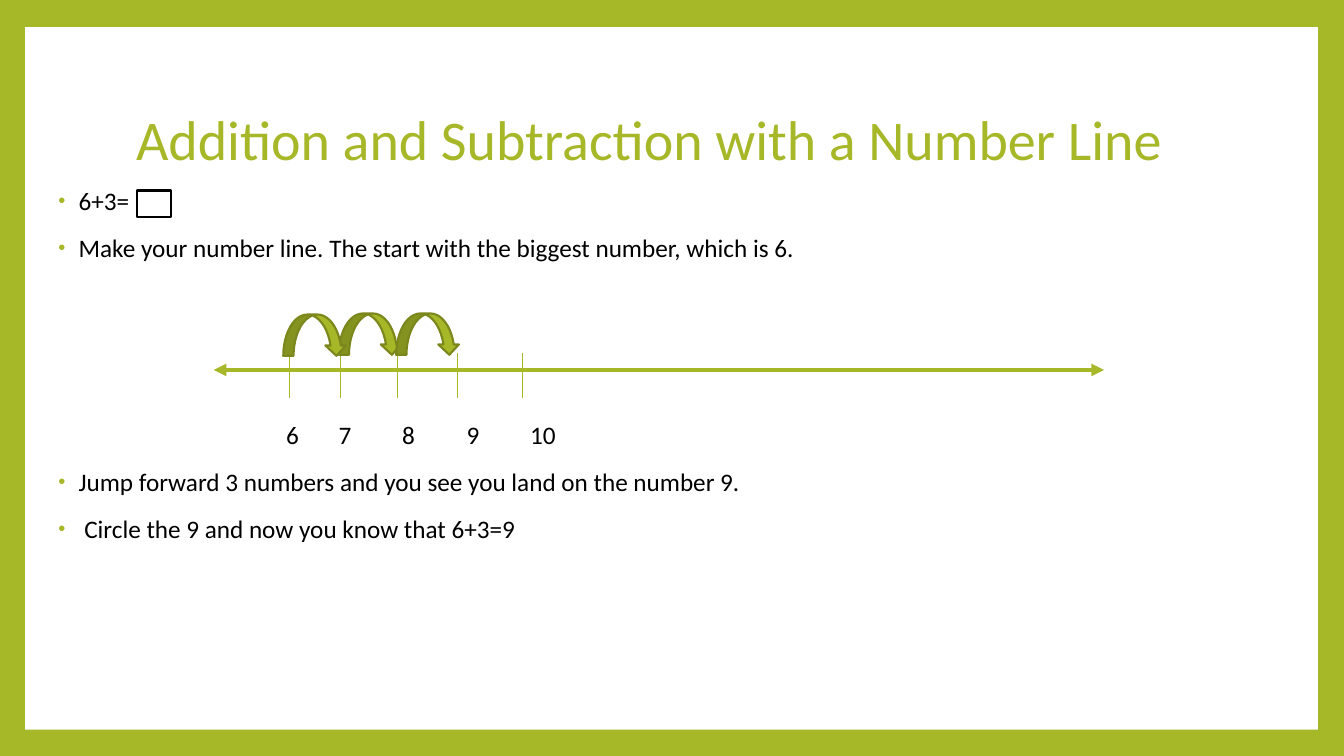
"""Builds a slide that shows 6+3 as jumps along a number line."""
from dataclasses import dataclass

from lxml import etree
from pptx import Presentation
from pptx.dml.color import RGBColor
from pptx.enum.shapes import MSO_CONNECTOR, MSO_SHAPE
from pptx.enum.text import MSO_ANCHOR, MSO_AUTO_SIZE, PP_ALIGN
from pptx.oxml.ns import qn
from pptx.util import Inches, Pt

RECT = MSO_SHAPE.RECTANGLE
JUMP = MSO_SHAPE.CURVED_DOWN_ARROW
STRAIGHT = MSO_CONNECTOR.STRAIGHT
LEFT = PP_ALIGN.LEFT
TOP, MIDDLE = MSO_ANCHOR.TOP, MSO_ANCHOR.MIDDLE
NO_FIT, GROW = MSO_AUTO_SIZE.NONE, MSO_AUTO_SIZE.SHAPE_TO_FIT_TEXT

FONT = "Calibri"
GREEN, DARK_GREEN, WHITE, BLACK = "A6B727", "7B871D", "FFFFFF", "000000"


@dataclass
class Box:
    """A preset shape with its place and colours."""
    kind: int
    left: float
    top: float
    width: float
    height: float
    fill: str
    line: str = ""


@dataclass
class Line:
    """A straight line between two points."""
    x1: float
    y1: float
    x2: float
    y2: float
    width: float
    arrows: bool = False


@dataclass
class Bullet:
    """A list item and the space above it in points."""
    text: str
    before: float = 14


PANEL = Box(RECT, 0.25, 0.27, 12.82, 6.97, WHITE)
ANSWER_BOX = Box(RECT, 1.36, 1.89, 0.34, 0.26, WHITE, BLACK)
JUMPS = [Box(JUMP, x, y, 0.63, 0.41, GREEN, DARK_GREEN)
         for x, y in ((3.36, 3.11), (2.81, 3.12), (3.93, 3.11))]
AXIS = Line(2.12, 3.67, 10.95, 3.67, 3, True)
TICKS = [Line(x, 3.5, x, 3.95, 0.79) for x in (2.87, 3.38, 3.94, 4.54, 5.18)]
LABELS = ["6", "7", "8", "9", "10"]
LABEL_TABS = [0.52, 1.15, 1.79, 2.42]
BULLETS = [
    Bullet("6+3="),
    Bullet("Make your number line. The start with the biggest number, which is 6."),
    Bullet("Jump forward 3 numbers and you see you land on the number 9.", 148),
    Bullet(" Circle the 9 and now you know that 6+3=9"),
]


def rgb(color: str) -> RGBColor:
    """Turn a hex string into a colour."""
    return RGBColor.from_string(color)


def place(shape, left: float, top: float, width: float, height: float) -> None:
    """Move and size a shape in inches."""
    shape.left, shape.top = Inches(left), Inches(top)
    shape.width, shape.height = Inches(width), Inches(height)


def add_run(p, text: str, size: float, color: str) -> None:
    """Add one formatted run to a paragraph."""
    r = p.add_run()
    r.text = text
    r.font.name, r.font.size = FONT, Pt(size)
    r.font.color.rgb = rgb(color)


def add_box(s, box: Box):
    """Draw a preset shape."""
    sp = s.shapes.add_shape(box.kind, Inches(box.left), Inches(box.top),
                            Inches(box.width), Inches(box.height))
    sp.shadow.inherit = False
    sp.fill.solid()
    sp.fill.fore_color.rgb = rgb(box.fill)
    if box.line:
        sp.line.color.rgb = rgb(box.line)
        sp.line.width = Pt(1.5)
    else:
        sp.line.fill.background()
    return sp


def add_line(s, line: Line) -> None:
    """Draw a green line, with arrowheads at both ends if asked."""
    cxn = s.shapes.add_connector(STRAIGHT, Inches(line.x1), Inches(line.y1),
                                 Inches(line.x2), Inches(line.y2))
    cxn.line.color.rgb = rgb(GREEN)
    cxn.line.width = Pt(line.width)
    if line.arrows:
        ln = cxn.line._get_or_add_ln()
        for end in ("a:headEnd", "a:tailEnd"):
            etree.SubElement(ln, qn(end), type="triangle")
    etree.SubElement(cxn._element.spPr, qn("a:effectLst"))


def add_bullet(p, bullet: Bullet) -> None:
    """Fill a paragraph as a list item with a green dot."""
    p.line_spacing = 0.9
    p.space_before = Pt(bullet.before)
    p.alignment = LEFT
    pPr = p._p.get_or_add_pPr()
    pPr.set("marL", str(Inches(0.25)))
    pPr.set("indent", str(Inches(-0.2)))
    clr = etree.SubElement(pPr, qn("a:buClr"))
    etree.SubElement(clr, qn("a:srgbClr"), val=GREEN)
    etree.SubElement(pPr, qn("a:buSzPct"), val="80000")
    etree.SubElement(pPr, qn("a:buFont"), typeface="Arial")
    etree.SubElement(pPr, qn("a:buChar"), char="•")
    add_run(p, bullet.text, 18, BLACK)


def add_title(s) -> None:
    """Fill the title placeholder."""
    title = s.shapes.title
    place(title, 1.25, 0.67, 10.8, 1.48)
    tf = title.text_frame
    tf.auto_size, tf.vertical_anchor = NO_FIT, MIDDLE
    p = tf.paragraphs[0]
    p.alignment, p.line_spacing = LEFT, 0.9
    add_run(p, "Addition and Subtraction with a Number Line", 40, GREEN)


def add_body(s) -> None:
    """Fill the body placeholder with the steps."""
    body = s.placeholders[1]
    place(body, 0.43, 1.82, 12.71, 5.94)
    tf = body.text_frame
    tf.auto_size, tf.vertical_anchor = NO_FIT, TOP
    for i, bullet in enumerate(BULLETS):
        add_bullet(tf.add_paragraph() if i else tf.paragraphs[0], bullet)


def add_labels(s) -> None:
    """Write the numbers under the line at tab stops."""
    tb = s.shapes.add_textbox(Inches(2.74), Inches(4.11), Inches(3.16), Inches(0.4))
    tf = tb.text_frame
    tf.word_wrap, tf.auto_size = True, GROW
    p = tf.paragraphs[0]
    tabs = etree.SubElement(p._p.get_or_add_pPr(), qn("a:tabLst"))
    for pos in LABEL_TABS:
        etree.SubElement(tabs, qn("a:tab"), pos=str(Inches(pos)), algn="l")
    add_run(p, "\t".join(LABELS), 18, BLACK)


def main() -> None:
    """Build and save the slide."""
    prs = Presentation()
    prs.slide_width, prs.slide_height = Inches(13.33), Inches(7.5)
    s = prs.slides.add_slide(prs.slide_layouts[1])
    s.background.fill.solid()
    s.background.fill.fore_color.rgb = rgb(GREEN)
    panel = add_box(s, PANEL)
    s.shapes.title._element.addprevious(panel._element)
    add_title(s)
    add_body(s)
    add_box(s, ANSWER_BOX)
    for line in [AXIS, *TICKS]:
        add_line(s, line)
    add_labels(s)
    for jump in JUMPS:
        add_box(s, jump)
    prs.save("out.pptx")


if __name__ == "__main__":
    main()
